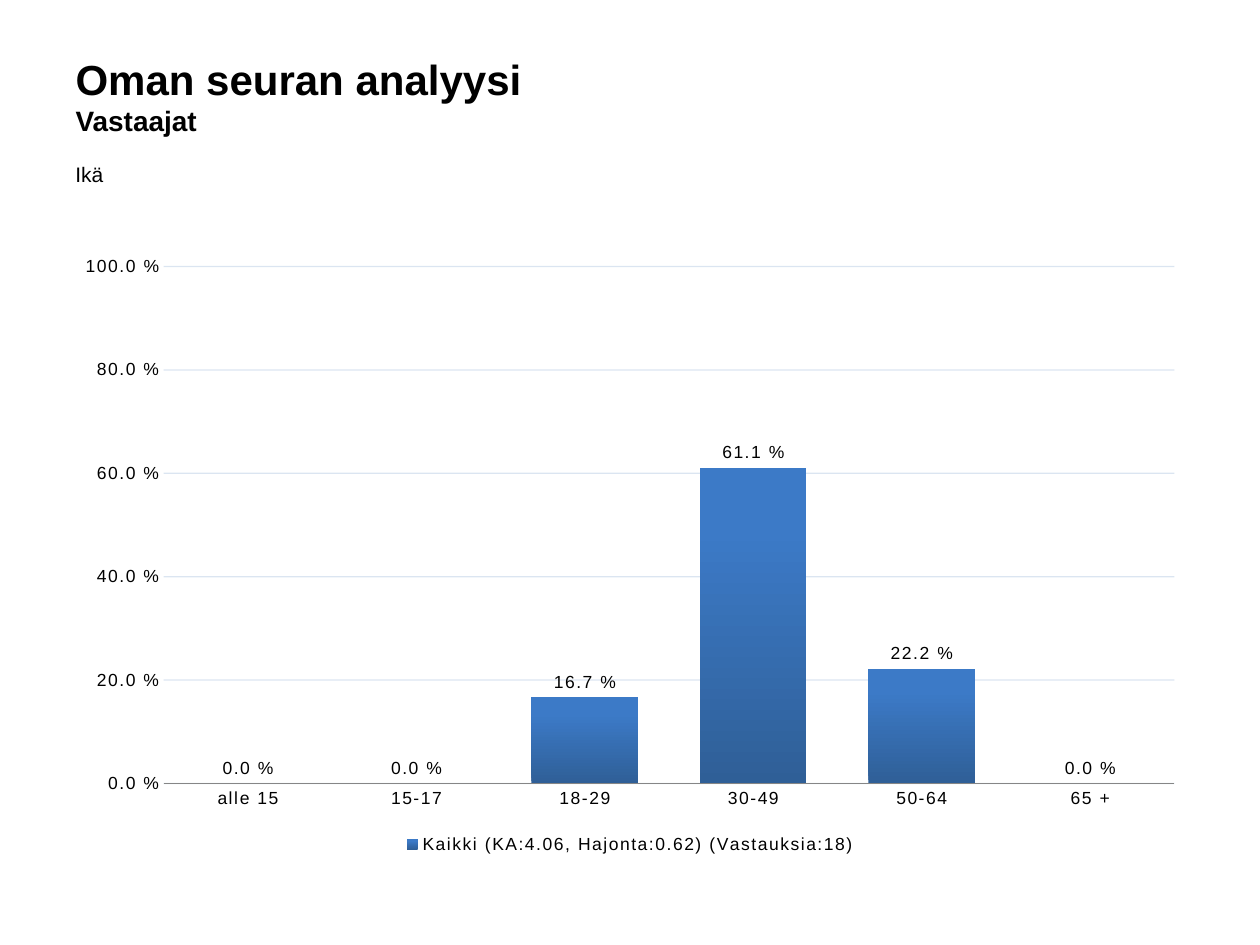
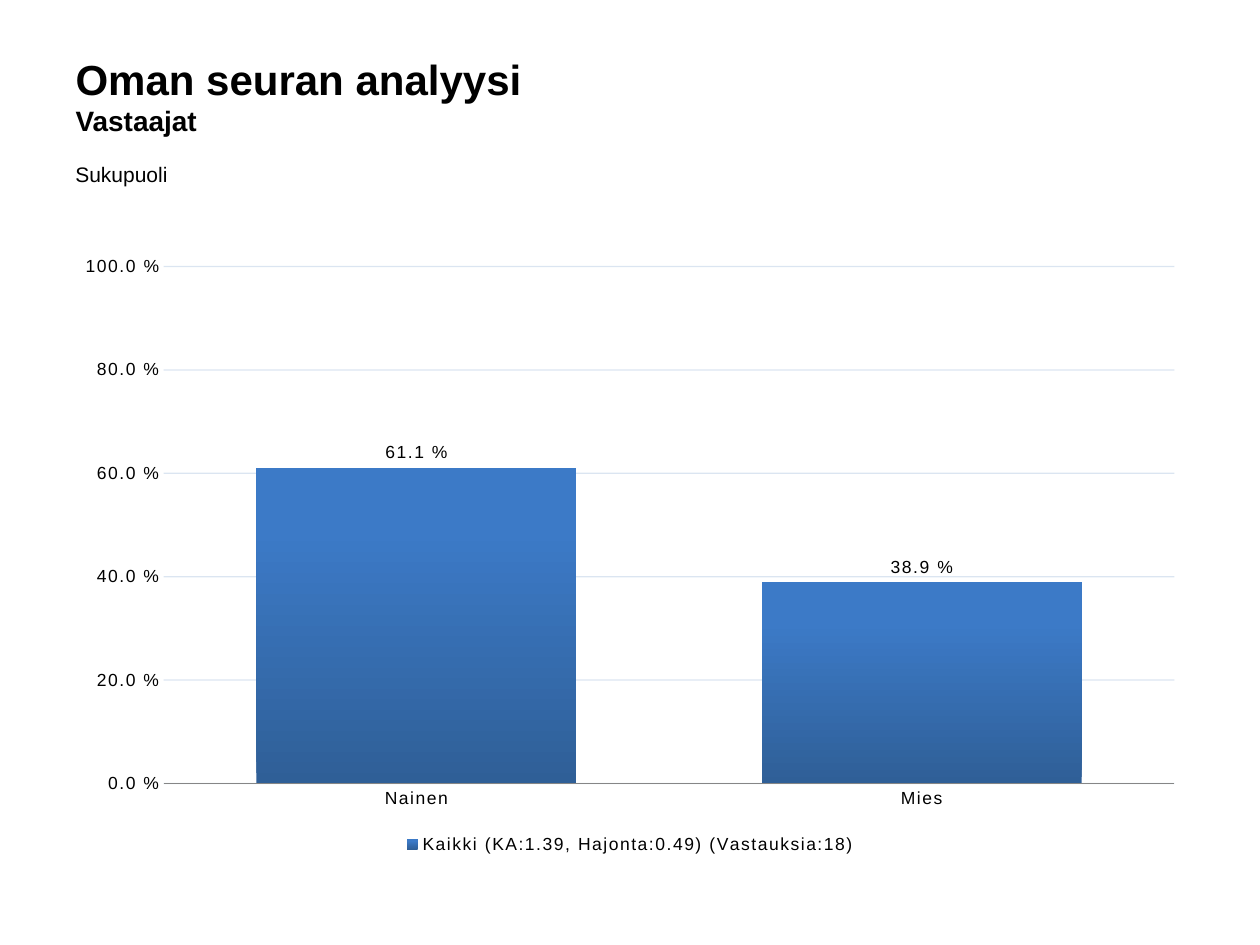
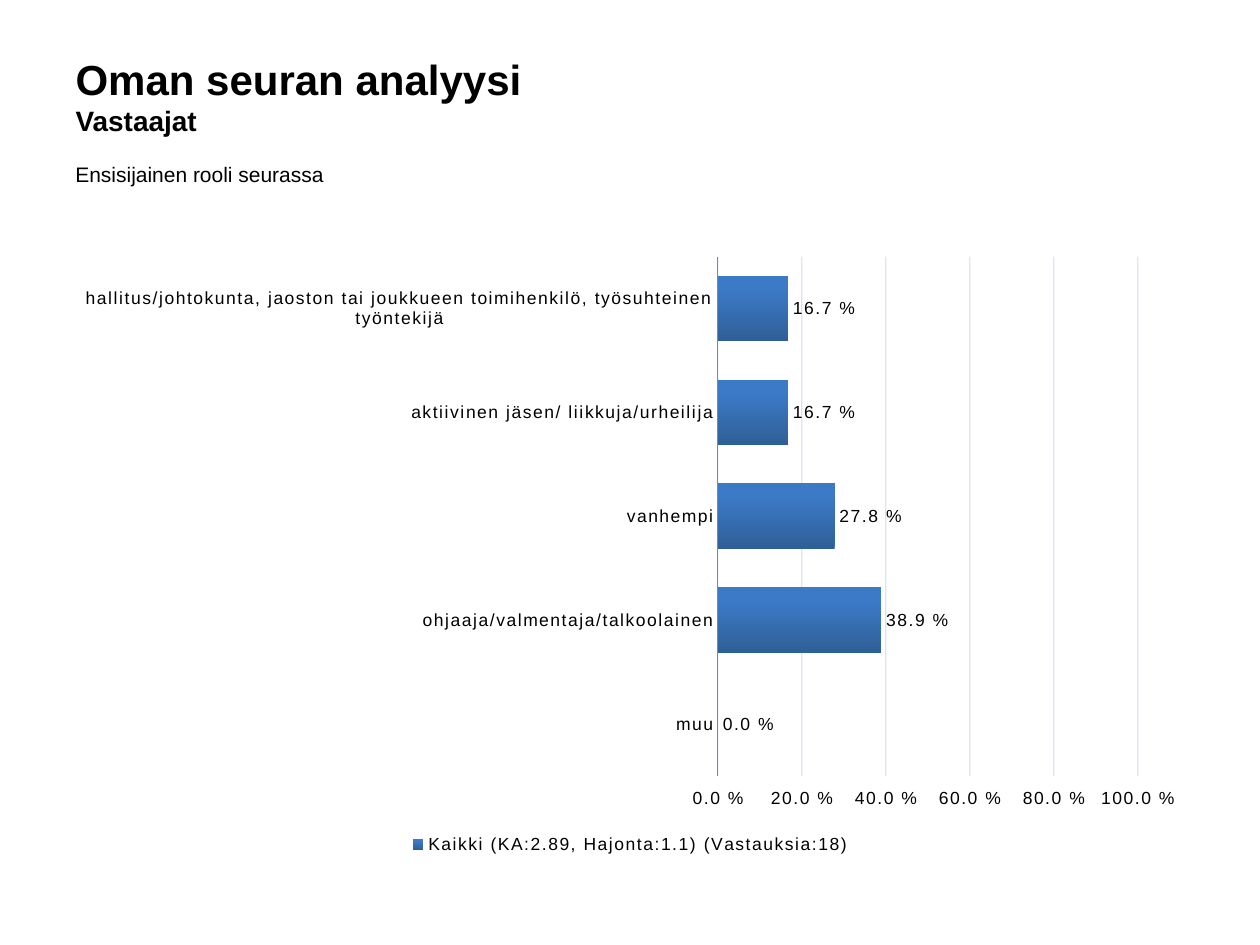
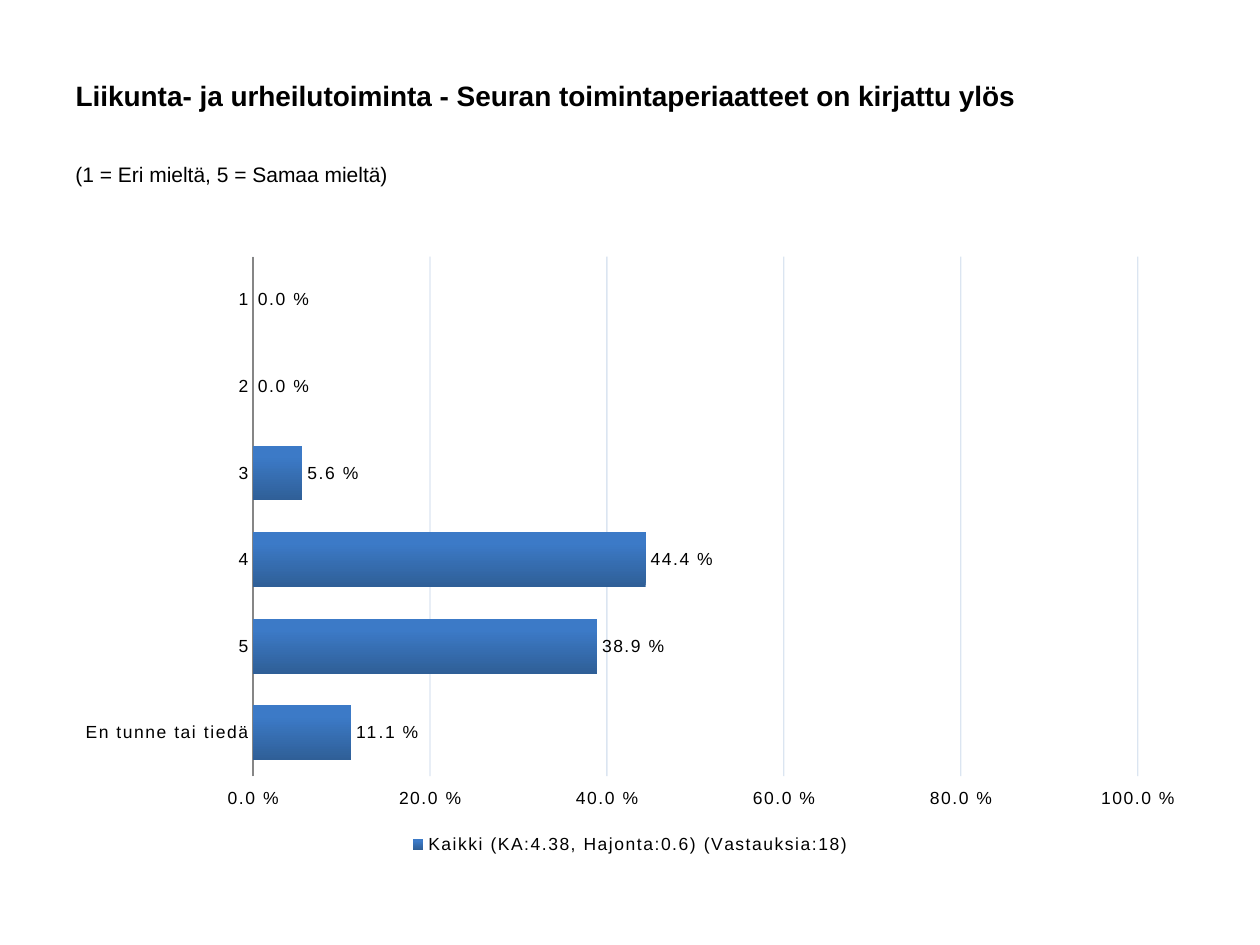
"""Build four survey result slides, each with a title, a question and a chart."""
from copy import deepcopy
from dataclasses import dataclass

from lxml import etree
from pptx import Presentation
from pptx import util as u
from pptx.chart.data import CategoryChartData
from pptx.dml.color import RGBColor
from pptx.enum import chart as ch
from pptx.enum import text
from pptx.oxml.ns import qn

COLOURS = {
    "text": "000000",
    "grid": "4F81BD",
    "axis": "868686",
    "bar_bottom": "2F5F97",
    "bar_middle": "3C7AC7",
    "bar_top": "3C7AC9",
}
FONT = "Arial"
CHART_FONT = "Calibri"
PERCENT = r"0.0\ %"
LEFT, WIDTH = u.Inches(0.5), u.Inches(9)
RESPONDENTS = (("Oman seuran analyysi", 24), ("Vastaajat", 16))


@dataclass(frozen=True)
class Question:
    heading: tuple[tuple[str, int], ...]
    prompt: str
    summary: str
    answers: dict[str, float]
    horizontal: bool = False


QUESTIONS = (
    Question(
        RESPONDENTS, "Ikä", "Kaikki (KA:4.06, Hajonta:0.62) (Vastauksia:18)",
        {"alle 15": 0, "15-17": 0, "18-29": 0.167, "30-49": 0.611,
         "50-64": 0.222, "65 +": 0},
    ),
    Question(
        RESPONDENTS, "Sukupuoli", "Kaikki (KA:1.39, Hajonta:0.49) (Vastauksia:18)",
        {"Nainen": 0.611, "Mies": 0.389},
    ),
    Question(
        RESPONDENTS, "Ensisijainen rooli seurassa",
        "Kaikki (KA:2.89, Hajonta:1.1) (Vastauksia:18)",
        {"hallitus/johtokunta, jaoston tai joukkueen toimihenkilö, "
         "työsuhteinen työntekijä": 0.167,
         "aktiivinen jäsen/ liikkuja/urheilija": 0.167,
         "vanhempi": 0.278,
         "ohjaaja/valmentaja/talkoolainen": 0.389,
         "muu": 0},
        horizontal=True,
    ),
    Question(
        (("Liikunta- ja urheilutoiminta - Seuran toimintaperiaatteet "
          "on kirjattu ylös", 16),),
        "(1 = Eri mieltä, 5 = Samaa mieltä)",
        "Kaikki (KA:4.38, Hajonta:0.6) (Vastauksia:18)",
        {"1": 0, "2": 0, "3": 0.056, "4": 0.444, "5": 0.389,
         "En tunne tai tiedä": 0.111},
        horizontal=True,
    ),
)


def colour(key: str) -> RGBColor:
    """Look up a shared colour."""
    return RGBColor.from_string(COLOURS[key])


def style_font(font, size: float, name: str = FONT, bold: bool = False) -> None:
    """Apply the shared text colour with a size, typeface and weight."""
    font.name, font.size, font.bold = name, u.Pt(size), bold
    font.color.rgb = colour("text")


def add_heading(slide, lines: tuple[tuple[str, int], ...]) -> None:
    """Place and fill the title."""
    title = slide.shapes.title
    title.left, title.top = LEFT, u.Inches(0.36)
    title.width, title.height = WIDTH, u.Inches(0.79)
    frame = title.text_frame
    frame.text = "\n".join(line for line, _ in lines)
    frame.auto_size = text.MSO_AUTO_SIZE.NONE
    frame.vertical_anchor = text.MSO_ANCHOR.MIDDLE
    for paragraph, (_, size) in zip(frame.paragraphs, lines):
        paragraph.alignment = text.PP_ALIGN.LEFT
        style_font(paragraph.runs[0].font, size, bold=True)


def add_prompt(slide, prompt: str) -> None:
    """Write the question under the title."""
    box = slide.shapes.add_textbox(LEFT, u.Inches(1.23), WIDTH, u.Inches(0.59))
    box.text_frame.word_wrap = True
    paragraph = box.text_frame.paragraphs[0]
    paragraph.text = prompt
    paragraph.space_before = u.Pt(2.4)
    style_font(paragraph.runs[0].font, 12)


def style_bars(plot) -> None:
    """Give the bars their gradient and their value labels."""
    plot.gap_width = 58
    plot.vary_by_categories = False
    bars = plot.series[0]
    bars.invert_if_negative = False
    fill = bars.format.fill
    fill.gradient()
    fill.gradient_angle = 90
    stop_list = next(bars._element.iter(qn("a:gsLst")))
    stop_list.insert(1, deepcopy(stop_list[0]))
    shades = (("bar_bottom", 0), ("bar_middle", 0.8), ("bar_top", 1))
    for stop, (key, position) in zip(fill.gradient_stops, shades):
        stop.color.rgb = colour(key)
        stop.position = position
    labels = bars.data_labels
    labels.show_value = True
    labels.number_format, labels.number_format_is_linked = PERCENT, False
    labels.position = ch.XL_LABEL_POSITION.OUTSIDE_END
    style_font(labels.font, 10)


def style_axes(chart, horizontal: bool) -> None:
    """Format both axes and the gridlines."""
    answers, shares = chart.category_axis, chart.value_axis
    for axis in (answers, shares):
        axis.major_tick_mark = axis.minor_tick_mark = ch.XL_TICK_MARK.NONE
        style_font(axis.tick_labels.font, 10)
    answers.has_major_gridlines = False
    answers.format.line.color.rgb = colour("axis")
    answers.format.line.width = u.Pt(0.75)
    if horizontal:
        answers.reverse_order = True
        shares.tick_label_position = ch.XL_TICK_LABEL_POSITION.HIGH
    shares.minimum_scale, shares.maximum_scale, shares.major_unit = 0, 1, 0.2
    shares.tick_labels.number_format = PERCENT
    shares.tick_labels.number_format_is_linked = False
    shares.format.line.fill.background()
    shares.has_major_gridlines = True
    grid = shares.major_gridlines.format.line
    grid.width = u.Pt(0.75)
    grid.color.rgb = colour("grid")
    gridlines = next(chart.element.iter(qn("c:majorGridlines")))
    tint = next(gridlines.iter(qn("a:srgbClr")))
    etree.SubElement(tint, qn("a:alpha")).set("val", "20000")


def add_answers(slide, question: Question) -> None:
    """Chart the share of each answer."""
    shares = CategoryChartData(number_format=PERCENT)
    shares.categories = list(question.answers)
    shares.add_series(question.summary, list(question.answers.values()))
    kind = (ch.XL_CHART_TYPE.BAR_CLUSTERED if question.horizontal
            else ch.XL_CHART_TYPE.COLUMN_CLUSTERED)
    chart = slide.shapes.add_chart(
        kind, LEFT, u.Inches(1.94), WIDTH, u.Inches(4.88), shares).chart
    chart.has_title = False
    style_font(chart.font, 10, CHART_FONT)
    chart.has_legend = True
    chart.legend.position = ch.XL_LEGEND_POSITION.BOTTOM
    chart.legend.include_in_layout = False
    style_font(chart.legend.font, 10)
    style_bars(chart.plots[0])
    style_axes(chart, question.horizontal)
    for properties in chart.element.iter(qn("a:defRPr")):
        properties.set("spc", "100")


def main() -> None:
    """Build and save the presentation."""
    deck = Presentation()
    deck.slide_width, deck.slide_height = u.Inches(10), u.Inches(7.5)
    title_only = deck.slide_layouts[5]
    for question in QUESTIONS:
        slide = deck.slides.add_slide(title_only)
        add_heading(slide, question.heading)
        add_prompt(slide, question.prompt)
        add_answers(slide, question)
    deck.save("out.pptx")


if __name__ == "__main__":
    main()
